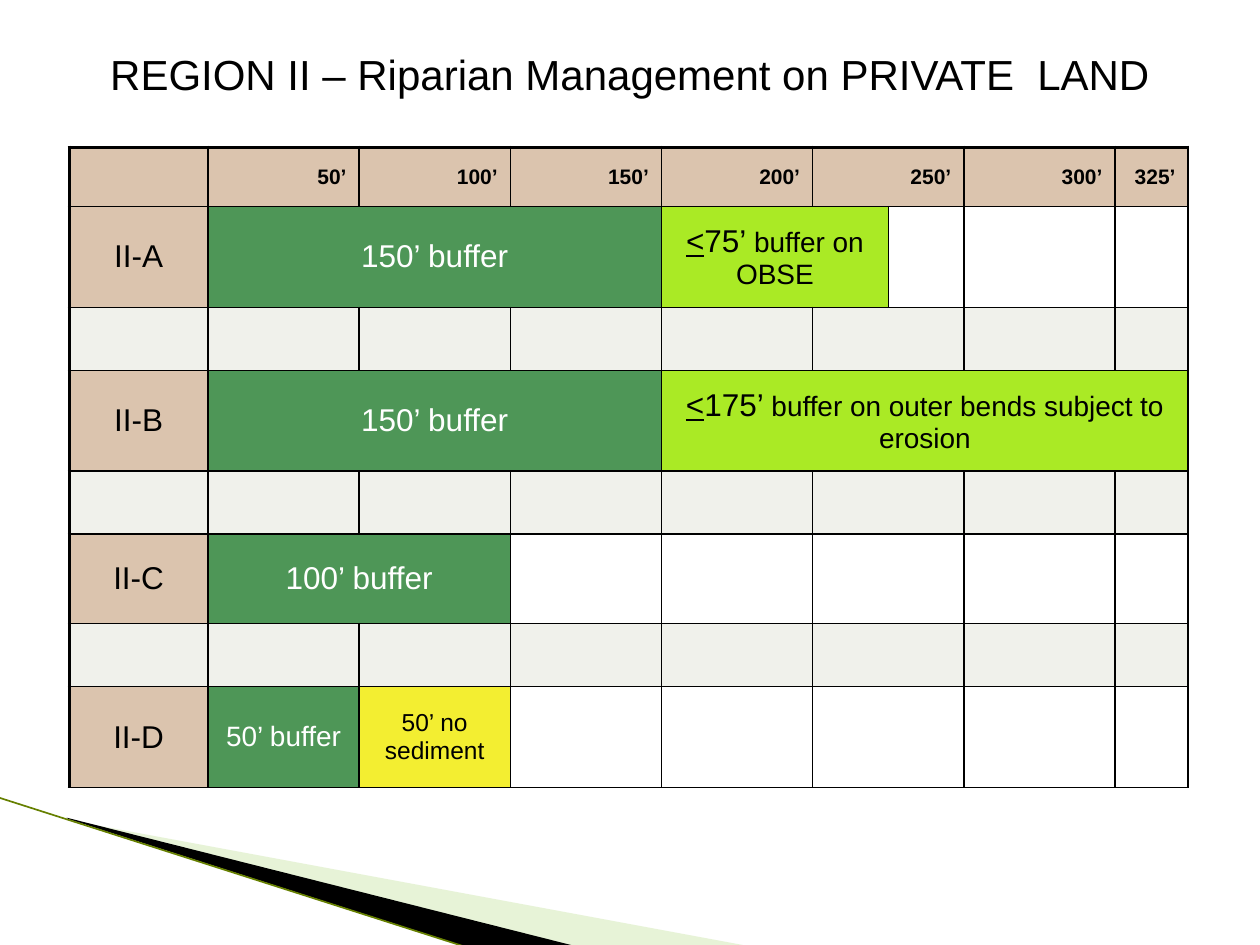
from lxml.etree import SubElement
from pptx import Presentation
from pptx.dml.color import RGBColor
from pptx.enum.text import MSO_ANCHOR, PP_ALIGN
from pptx.enum.shapes import MSO_CONNECTOR
from pptx.oxml.ns import qn
from pptx.util import Inches, Pt

BLACK = RGBColor(0, 0, 0)
WHITE = RGBColor(255, 255, 255)
TAN = RGBColor(0xDB, 0xC4, 0xAE)
GREEN = RGBColor(0x4E, 0x96, 0x57)
LIME = RGBColor(0xAA, 0xEA, 0x25)
YELLOW = RGBColor(0xF3, 0xEE, 0x31)
PALE = RGBColor(0xF0, 0xF1, 0xEB)
LEAF = RGBColor(0xC3, 0xE1, 0x9D)
OLIVE = RGBColor(0x66, 0x80, 0x00)

# Content: each cell is (text, columns spanned, fill, size)
TITLE = "REGION II – Riparian Management on PRIVATE  LAND"
COLUMN_WIDTHS = [1.1, 1.2, 1.2, 1.2, 1.2, 0.6, 0.6, 1.2, 0.58]
ROW_HEIGHTS = [0.47, 0.8, 0.5, 0.8, 0.5, 0.71, 0.5, 0.8]
DISTANCES = ["50’", "100’", "150’", "200’", "250’", "300’", "325’"]
HEADER = [("", 1, TAN, 12)] + [
    (label, 2 if label == "250’" else 1, TAN, 12) for label in DISTANCES]
SPACER = [("", 1, PALE, 18)] * 5 + [("", 2, PALE, 18)] + [("", 1, PALE, 18)] * 2
EMPTY = ("", 1, None, 18)
EMPTY_PAIR = ("", 2, None, 18)
ROWS = [
    HEADER,
    [("II-A", 1, TAN, 18), ("150’ buffer", 3, GREEN, 18),
     (("75’ ", "buffer on OBSE"), 2, LIME, 18), EMPTY, EMPTY, EMPTY],
    SPACER,
    [("II-B", 1, TAN, 18), ("150’ buffer", 3, GREEN, 18),
     (("175’ ", "buffer on outer bends subject to erosion"), 5, LIME, 18)],
    SPACER,
    [("II-C", 1, TAN, 18), ("100’ buffer", 2, GREEN, 18),
     EMPTY, EMPTY, EMPTY_PAIR, EMPTY, EMPTY],
    SPACER,
    [("II-D", 1, TAN, 18), ("50’ buffer", 1, GREEN, 16),
     ("50’ no sediment", 1, YELLOW, 14), EMPTY, EMPTY, EMPTY_PAIR, EMPTY, EMPTY],
]
# Corner wedges: outline, fill, opacity in percent
WEDGES = [
    ([(0.55, 6.51), (5.95, 7.51), (4.56, 7.51), (0.55, 6.5)], LEAF, 40),
    ([(0.53, 6.49), (4.57, 7.51), (3.72, 7.52), (0.54, 6.5)], BLACK, 100),
]


def add_wedge(slide, points, color, opacity):
    corners = [(Inches(x), Inches(y)) for x, y in points]
    builder = slide.shapes.build_freeform(*corners[0])
    builder.add_line_segments(corners[1:], close=True)
    wedge = builder.convert_to_shape()
    wedge.shadow.inherit = False
    wedge.fill.solid()
    wedge.fill.fore_color.rgb = color
    wedge.line.fill.background()
    if opacity < 100:
        color_node = wedge._element.spPr.find(qn("a:solidFill"))[0]
        SubElement(color_node, qn("a:alpha"), val=str(opacity * 1000))


def set_borders(cell, row, column):
    properties = cell._tc.get_or_add_tcPr()
    for side in "LRTB":
        thick = (side == "L" and column == 0) or (side == "T" and row == 0)
        border = SubElement(properties, qn(f"a:ln{side}"),
                            w=str(Pt(2.25 if thick else 1)))
        SubElement(SubElement(border, qn("a:solidFill")),
                   qn("a:srgbClr"), val=str(BLACK))


def style_span(span, size, color=BLACK, bold=False):
    span.font.name = "Arial"
    span.font.size = Pt(size)
    span.font.color.rgb = color
    span.font.bold = bold


def fill_cell(cell, text, fill, size, is_header):
    if fill is None:
        cell.fill.background()
    else:
        cell.fill.solid()
        cell.fill.fore_color.rgb = fill
    cell.vertical_anchor = MSO_ANCHOR.MIDDLE
    para = cell.text_frame.paragraphs[0]
    para.alignment = PP_ALIGN.RIGHT if is_header else PP_ALIGN.CENTER
    if not text:
        para.font.size = Pt(size)
    elif isinstance(text, tuple):
        limit, note = text
        for words, span_size in (("<", size), (limit, size), (note, 16)):
            span = para.add_run()
            span.text = words
            style_span(span, span_size)
            span.font.underline = words == "<"
    else:
        para.text = text
        style_span(para.runs[0], size, WHITE if fill == GREEN else BLACK, is_header)


def add_buffer_table(slide):
    frame = slide.shapes.add_table(
        len(ROWS), len(COLUMN_WIDTHS), Inches(0.55), Inches(1.17),
        Inches(sum(COLUMN_WIDTHS)), Inches(sum(ROW_HEIGHTS)))
    table = frame.table
    table.first_row = table.horz_banding = False
    for column, width in zip(table.columns, COLUMN_WIDTHS):
        column.width = Inches(width)
    for row, height in zip(table.rows, ROW_HEIGHTS):
        row.height = Inches(height)
    for r, cells in enumerate(ROWS):
        for c in range(len(COLUMN_WIDTHS)):
            set_borders(table.cell(r, c), r, c)
        c = 0
        for text, width, fill, size in cells:
            cell = table.cell(r, c)
            if width > 1:
                cell.merge(table.cell(r, c + width - 1))
            fill_cell(cell, text, fill, size, r == 0)
            c += width


def main():
    deck = Presentation()
    deck.slide_width, deck.slide_height = Inches(10), Inches(7.5)
    slide = deck.slides.add_slide(deck.slide_layouts[5])

    # Corner decoration
    for wedge in WEDGES:
        add_wedge(slide, *wedge)
    edge = slide.shapes.add_connector(
        MSO_CONNECTOR.STRAIGHT, Inches(-0.01), Inches(6.33), Inches(3.71), Inches(7.52))
    edge.line.color.rgb = OLIVE
    edge.line.width = Pt(0.95)
    SubElement(edge._element.spPr, qn("a:effectLst"))

    # Title
    title = slide.shapes.title
    title.left, title.top = Inches(0.5), Inches(0.33)
    title.width, title.height = Inches(9), Inches(0.51)
    title.text_frame.text = TITLE
    title.text_frame.vertical_anchor = MSO_ANCHOR.MIDDLE
    para = title.text_frame.paragraphs[0]
    para.alignment = PP_ALIGN.CENTER
    style_span(para.runs[0], 24)

    # Buffer widths by stream class
    add_buffer_table(slide)
    deck.save("out.pptx")


if __name__ == "__main__":
    main()
